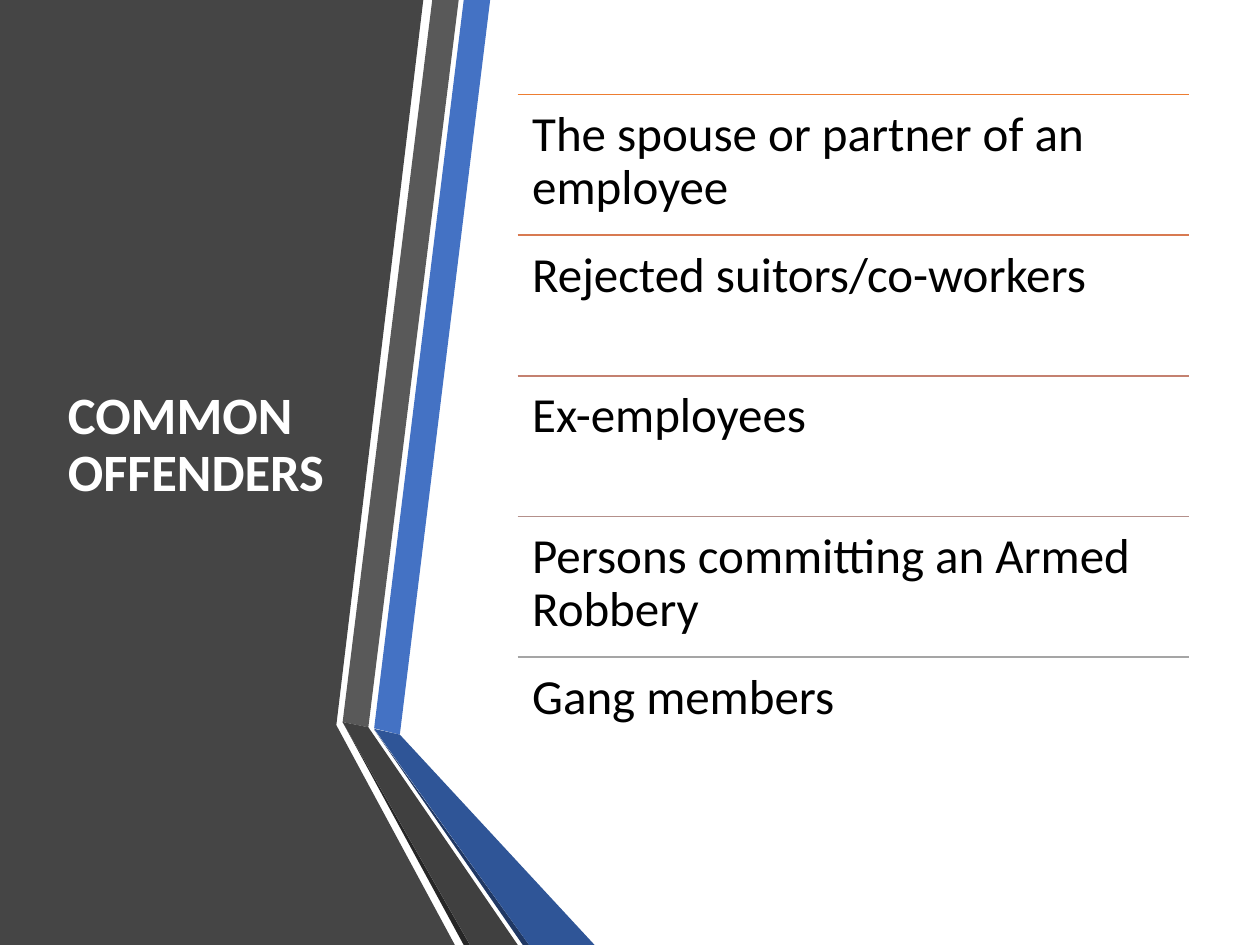
"""Build the common offenders slide."""
from pptx import Presentation, util as u
from pptx.dml.color import RGBColor
from pptx.enum import shapes as sh, text as tx
from pptx.oxml.ns import qn
from lxml import etree

HUES = {
    "panel": "454545", "blue": "4472C4", "gray": "595959",
    "edge": "262626", "navy": "203864", "deep": "2F5597",
    "dark": "404040", "white": "FFFFFF", "black": "000000",
}
BANDS = [
    ("panel", [(0, 0), (190.1, 0), (241.9, 0), (192.2, 414.4), (259.9, 540), (0, 540)]),
    ("blue", [(213.8, 416.2), (228.5, 419.8), (280.1, 0), (265, 0)]),
    ("gray", [(262.1, 0), (247, 0), (195.8, 412.6), (210.5, 415.6)]),
    ("edge", [(195.8, 412.6), (265, 540), (268.6, 540)]),
    ("navy", [(213.8, 416.9), (298.8, 540), (302.4, 540)]),
    ("deep", [(213.8, 416.5), (302.4, 540), (339.8, 540), (228.5, 419.8)]),
    ("dark", [(195.8, 412.6), (268.6, 540), (295.9, 540), (210.5, 415.6)]),
]
ROWS = [
    ("The spouse or partner of an employee", "ED7D31"),
    ("Rejected suitors/co-workers", "D87A51"),
    ("Ex-employees", "C48170"),
    ("Persons committing an Armed Robbery", "B4908B"),
    ("Gang members", "A5A5A5"),
]
LEFT, TOP, WIDE, STEP = 295.75, 54, 383.5, 80.4


def write(words, area, inset, anchor, after, font):
    box = slide.shapes.add_textbox(*map(u.Pt, area))
    frame = box.text_frame
    form = {"word_wrap": True, "vertical_anchor": anchor}
    for side, gap in zip(("left", "top", "right", "bottom"), inset):
        form["margin_" + side] = u.Pt(gap)
    for key, val in form.items():
        setattr(frame, key, val)
    para = frame.paragraphs[0]
    para.line_spacing = 0.9
    para.space_after = u.Pt(after)
    run = para.add_run()
    run.text = words
    hue = font.pop("hue")
    for key, val in font.items():
        setattr(run.font, key, val)
    run.font.color.rgb = RGBColor.from_string(HUES[hue])


deck = Presentation()
deck.slide_width, deck.slide_height = u.Pt(720), u.Pt(540)
slide = deck.slides.add_slide(deck.slide_layouts[6])

for hue, spots in BANDS:
    dots = [(u.Pt(x), u.Pt(y)) for x, y in spots]
    pen = slide.shapes.build_freeform(*dots[0])
    pen.add_line_segments(dots[1:], close=True)
    band = pen.convert_to_shape()
    band.shadow.inherit = False
    band.fill.solid()
    band.fill.fore_color.rgb = RGBColor.from_string(HUES[hue])
    band.line.fill.background()

write("COMMON OFFENDERS", (31.7, 54, 164.2, 401.8), (7.2, 3.6, 7.2, 3.6),
      tx.MSO_ANCHOR.MIDDLE, 0,
      {"name": "Calibri", "size": u.Pt(30), "bold": True, "hue": "white"})

for i, (words, hue) in enumerate(ROWS):
    y = TOP + i * STEP
    rule = slide.shapes.add_connector(
        sh.MSO_CONNECTOR.STRAIGHT, *map(u.Pt, (LEFT, y, LEFT + WIDE, y)))
    rule.line.color.rgb = RGBColor.from_string(hue)
    rule.line.width = u.Pt(1)
    etree.SubElement(rule._element.spPr, qn("a:effectLst"))
    write(words, (LEFT, y, WIDE, STEP), (8.4,) * 4, tx.MSO_ANCHOR.TOP, 9.8,
          {"name": "Calibri", "size": u.Pt(28), "hue": "black"})

deck.save("out.pptx")
